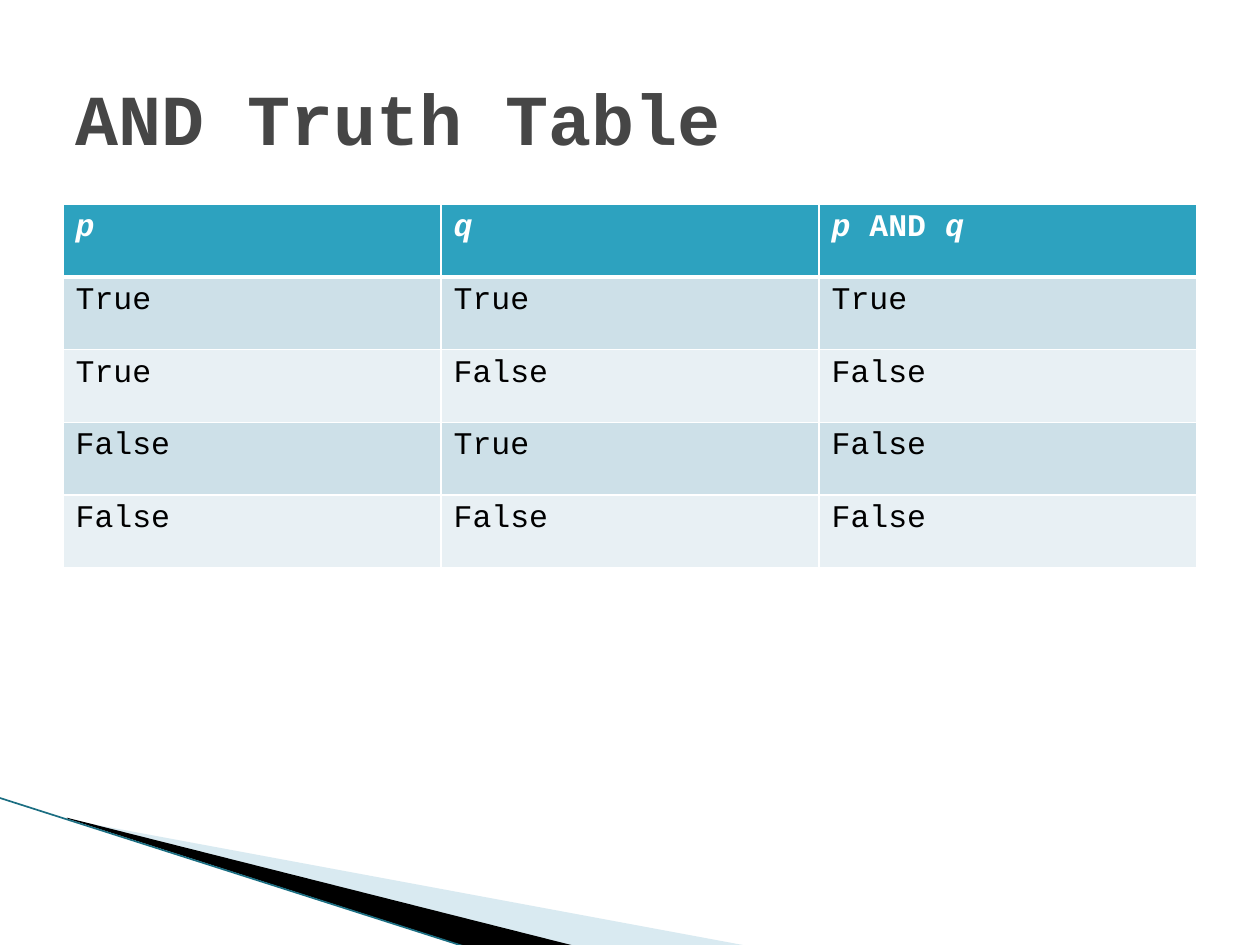
import dataclasses

import lxml.etree
import pptx
import pptx.dml.color
import pptx.enum.shapes
import pptx.enum.text
import pptx.oxml.ns
import pptx.util

Pt = pptx.util.Pt
Color = pptx.dml.color.RGBColor.from_string
qn = pptx.oxml.ns.qn


@dataclasses.dataclass(frozen=True)
class Theme:
    font: str = "Courier New"
    title_size: int = 41
    table_size: int = 18
    title: str = "464646"
    header: str = "2DA2BF"
    bands: tuple = ("CDE0E8", "E8F0F4")
    white: str = "FFFFFF"
    black: str = "000000"
    pale_wedge: str = "A0CBDC"
    edge: str = "1B6E82"


theme = Theme()


def add_text(paragraph, text, *, size, color, bold=False, italic=False):
    run = paragraph.add_run()
    run.text = text
    run.font.name = theme.font
    run.font.size = Pt(size)
    run.font.color.rgb = Color(color)
    run.font.bold = bold
    run.font.italic = italic


def set_borders(cell, bottom_width):
    properties = cell._tc.get_or_add_tcPr()
    for side, width in (("L", 1), ("R", 1), ("T", 1), ("B", bottom_width)):
        line = lxml.etree.SubElement(properties, qn(f"a:ln{side}"), w=str(Pt(width)))
        fill = lxml.etree.SubElement(line, qn("a:solidFill"))
        lxml.etree.SubElement(fill, qn("a:srgbClr"), val=theme.white)


presentation = pptx.Presentation()
presentation.slide_width = Pt(720)
presentation.slide_height = Pt(540)
slide = presentation.slides.add_slide(presentation.slide_layouts[6])

# Corner wedges: colour, opacity in percent, outline points
wedges = [
    (theme.pale_wedge, 40, [(39.6, 468.5), (428.4, 540.7), (328.3, 540.7), (39.6, 468)]),
    (theme.black, 100, [(38.2, 467.3), (329, 540.7), (267.8, 541.4), (38.9, 468)]),
]
for color, opacity, points in wedges:
    outline = [(Pt(x), Pt(y)) for x, y in points]
    builder = slide.shapes.build_freeform(*outline[0], scale=1.0)
    builder.add_line_segments(outline[1:], close=True)
    wedge = builder.convert_to_shape()
    wedge.shadow.inherit = False
    wedge.fill.solid()
    wedge.fill.fore_color.rgb = Color(color)
    wedge.line.fill.background()
    if opacity < 100:
        color_element = wedge._element.spPr.find(".//" + qn("a:srgbClr"))
        lxml.etree.SubElement(color_element, qn("a:alpha"), val=str(opacity * 1000))

# Corner edge line
edge = slide.shapes.add_connector(
    pptx.enum.shapes.MSO_CONNECTOR.STRAIGHT, Pt(-0.7), Pt(455.8), Pt(267.1), Pt(541.4)
)
edge.line.color.rgb = Color(theme.edge)
edge.line.width = Pt(0.95)
lxml.etree.SubElement(edge._element.spPr, qn("a:effectLst"))

# Truth table
header = [[("p", True)], [("q", True)], [("p ", True), ("AND", False), (" q", True)]]
truth_rows = [
    [str(value) for value in (p, q, p and q)] for p in (True, False) for q in (True, False)
]
row_height = 41.5
row_count = 1 + len(truth_rows)
table = slide.shapes.add_table(
    row_count, 3, Pt(36), Pt(116.8), Pt(648), Pt(row_height * row_count)
).table
for row in table.rows:
    row.height = Pt(row_height)

for column, runs in enumerate(header):
    cell = table.cell(0, column)
    set_borders(cell, 3)
    cell.fill.solid()
    cell.fill.fore_color.rgb = Color(theme.header)
    for text, italic in runs:
        add_text(cell.text_frame.paragraphs[0], text, size=theme.table_size,
                 color=theme.white, bold=True, italic=italic)

for index, values in enumerate(truth_rows):
    for column, value in enumerate(values):
        cell = table.cell(index + 1, column)
        set_borders(cell, 1)
        cell.fill.solid()
        cell.fill.fore_color.rgb = Color(theme.bands[index % 2])
        add_text(cell.text_frame.paragraphs[0], value, size=theme.table_size, color=theme.black)

# Title
title_frame = slide.shapes.add_textbox(Pt(36), Pt(21.6), Pt(648), Pt(90)).text_frame
title_frame.word_wrap = True
title_frame.vertical_anchor = pptx.enum.text.MSO_ANCHOR.MIDDLE
add_text(title_frame.paragraphs[0], "AND Truth Table", size=theme.title_size,
         color=theme.title, bold=True)

presentation.save("out.pptx")
